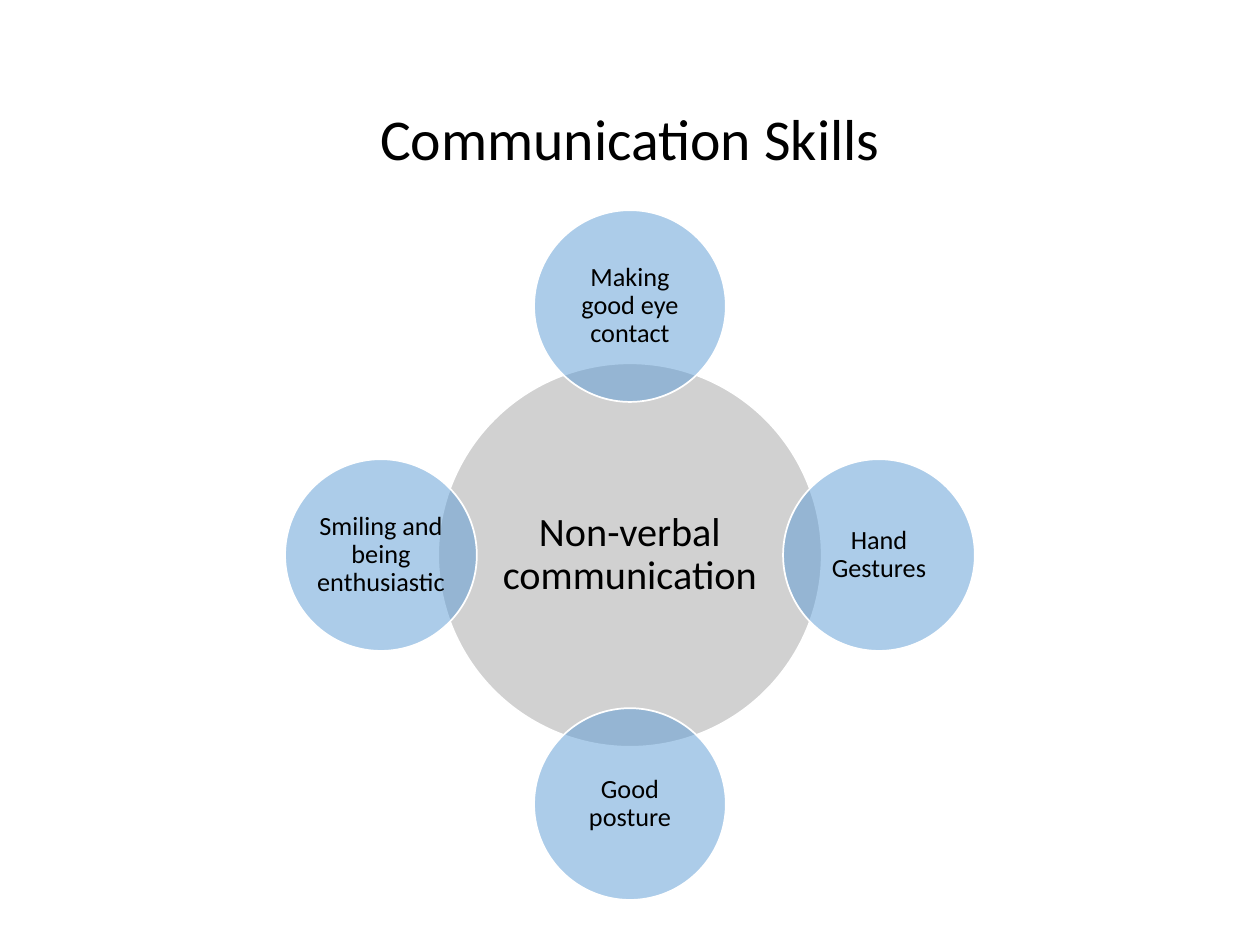
from lxml import etree
from pptx import Presentation
from pptx.dml.color import RGBColor
from pptx.enum.shapes import MSO_SHAPE
from pptx.enum.text import MSO_ANCHOR, MSO_AUTO_SIZE, PP_ALIGN
from pptx.oxml.ns import qn
from pptx.util import Pt

OVAL = MSO_SHAPE.OVAL
MIDDLE = MSO_ANCHOR.MIDDLE
CENTER = PP_ALIGN.CENTER
NO_AUTOFIT = MSO_AUTO_SIZE.NONE
TITLE_ONLY = 5

COLORS = {"text": "000000", "hub": "A5A5A5", "satellite": "5B9BD5", "outline": "FFFFFF"}
FONT = "Calibri"
INSCRIBED = 0.707  # side of the square inside a circle, relative to its diameter

HUB_TEXT = "Non-verbal communication"
# Label and direction from the hub, clockwise from the top
SATELLITES = [
    ("Making good eye contact", (0, -1)),
    ("Hand Gestures", (1, 0)),
    ("Good posture", (0, 1)),
    ("Smiling and being enthusiastic", (-1, 0)),
]


def set_attributes(target, values):
    for name, value in values.items():
        setattr(target, name, value)


def write_text(shape, text, size, inset):
    frame = shape.text_frame
    margins = {f"margin_{side}": Pt(inset) for side in ("left", "top", "right", "bottom")}
    set_attributes(frame, {"word_wrap": True, "auto_size": NO_AUTOFIT,
                           "vertical_anchor": MIDDLE, **margins})
    paragraph = frame.paragraphs[0]
    set_attributes(paragraph, {"alignment": CENTER, "line_spacing": 0.9})
    run = paragraph.add_run()
    run.text = text
    set_attributes(run.font, {"name": FONT, "size": Pt(size)})
    run.font.color.rgb = RGBColor.from_string(COLORS["text"])


def set_opacity(shape, percent):
    color = shape.fill._xPr.find(qn("a:solidFill"))[0]
    etree.SubElement(color, qn("a:alpha"), val=str(percent * 1000))


def square_box(center_x, center_y, side):
    return Pt(center_x - side / 2), Pt(center_y - side / 2), Pt(side), Pt(side)


def add_circle(group, center_x, center_y, diameter, color, text, size, inset):
    circle = group.shapes.add_shape(OVAL, *square_box(center_x, center_y, diameter))
    circle.shadow.inherit = False
    circle.fill.solid()
    circle.fill.fore_color.rgb = RGBColor.from_string(COLORS[color])
    set_opacity(circle, 50)
    circle.line.width = Pt(1)
    circle.line.color.rgb = RGBColor.from_string(COLORS["outline"])

    label = group.shapes.add_textbox(*square_box(center_x, center_y, diameter * INSCRIBED))
    write_text(label, text, size, inset)


def build_title(slide, left, top, width, height):
    title = slide.shapes.title
    set_attributes(title, {"left": Pt(left), "top": Pt(top),
                           "width": Pt(width), "height": Pt(height)})
    write_text(title, "Communication Skills", 33, 3.6)


def build_radial_diagram(slide, left, top, side):
    center_x, center_y = left + side / 2, top + side / 2
    hub = side * 0.556
    satellite = hub / 2
    orbit = (side - satellite) / 2
    group = slide.shapes.add_group_shape()

    # Hub
    add_circle(group, center_x, center_y, hub, "hub", HUB_TEXT, 23, 2.2)

    # Satellites overlapping the hub's edge
    for text, (step_x, step_y) in SATELLITES:
        add_circle(group, center_x + step_x * orbit, center_y + step_y * orbit,
                   satellite, "satellite", text, 15, 1.4)


def main():
    presentation = Presentation()
    presentation.slide_width, presentation.slide_height = Pt(720), Pt(540)
    slide = presentation.slides.add_slide(presentation.slide_layouts[TITLE_ONLY])
    build_title(slide, 49.5, 28.8, 621, 104.4)
    build_radial_diagram(slide, 162.9, 120.1, 394.2)
    presentation.save("out.pptx")


if __name__ == "__main__":
    main()
